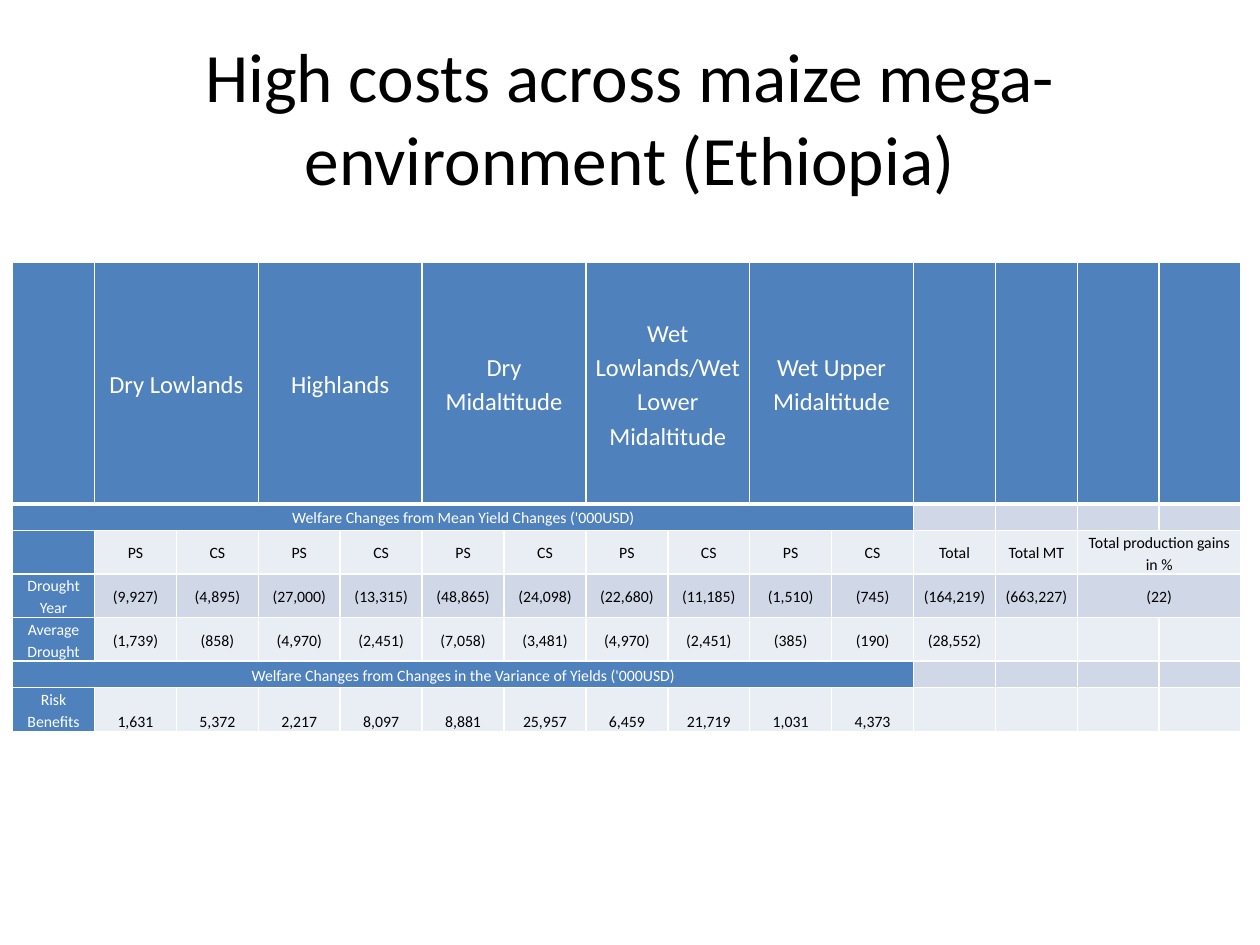
from lxml import etree
from pptx import Presentation
from pptx.dml.color import RGBColor
from pptx.enum import text
from pptx.oxml.ns import qn
from pptx.util import Inches, Pt

BLACK = RGBColor(0x00, 0x00, 0x00)
WHITE = RGBColor(0xFF, 0xFF, 0xFF)
BLUE = RGBColor(0x4F, 0x81, 0xBD)
BAND_DARK = RGBColor(0xD0, 0xD8, 0xE8)
BAND_LIGHT = RGBColor(0xE9, 0xED, 0xF4)

FONT = "Calibri"
COLUMN_COUNT = 15
SECTION_SPAN = 11
ROW_HEIGHTS = [1.92, 0.21, 0.33, 0.33, 0.33, 0.21, 0.33]
ZONES = [
    "Dry Lowlands",
    "Highlands",
    "Dry Midaltitude",
    "Wet Lowlands/Wet Lower Midaltitude",
    "Wet Upper Midaltitude",
]
ROWS = [
    [""] + [label for zone in ZONES for label in (zone, "")],
    ["Welfare Changes from Mean Yield Changes ('000USD)"],
    [""] + ["PS", "CS"] * len(ZONES) + ["Total", "Total MT", "Total production gains in %"],
    ["Drought Year", "(9,927)", "(4,895)", "(27,000)", "(13,315)", "(48,865)", "(24,098)",
     "(22,680)", "(11,185)", "(1,510)", "(745)", "(164,219)", "(663,227)", "(22)"],
    ["Average Drought", "(1,739)", "(858)", "(4,970)", "(2,451)", "(7,058)", "(3,481)",
     "(4,970)", "(2,451)", "(385)", "(190)", "(28,552)"],
    ["Welfare Changes from Changes in the Variance of Yields ('000USD)"],
    ["Risk Benefits", "1,631", "5,372", "2,217", "8,097", "8,881", "25,957",
     "6,459", "21,719", "1,031", "4,373"],
]
HEADER_ROW, RISK_ROW = 0, 6
SECTION_ROWS = (1, 5)
GAIN_ROWS = (2, 3)
GAIN_COLUMN = 13


def set_attributes(target, values):
    for name, value in values.items():
        setattr(target, name, value)


def add_title(slide, left, top, width, height):
    shape = slide.shapes.add_textbox(left, top, width, height)
    set_attributes(shape.text_frame, {
        "word_wrap": True,
        "vertical_anchor": text.MSO_ANCHOR.MIDDLE,
    })
    paragraph = shape.text_frame.paragraphs[0]
    paragraph.alignment = text.PP_ALIGN.CENTER
    run = paragraph.add_run()
    run.text = "High costs across maize mega-environment (Ethiopia)"
    set_attributes(run.font, {"name": FONT, "size": Pt(39.6)})
    run.font.color.rgb = BLACK


def set_borders(cell, bottom_width):
    properties = cell._tc.get_or_add_tcPr()
    widths = {"a:lnL": 1, "a:lnR": 1, "a:lnT": 1, "a:lnB": bottom_width}
    for tag, width in widths.items():
        line = etree.SubElement(properties, qn(tag), w=str(Pt(width)))
        fill = etree.SubElement(line, qn("a:solidFill"))
        etree.SubElement(fill, qn("a:srgbClr"), val=str(WHITE))


def format_cell(cell, label, row, column):
    is_header = row == HEADER_ROW
    is_blue = is_header or column == 0 or (row in SECTION_ROWS and column < SECTION_SPAN)
    is_risk_value = row == RISK_ROW and column > 0
    size = Pt(14 if is_header else 9)
    set_borders(cell, 3 if is_header else 1)
    cell.fill.solid()
    band = BAND_DARK if row % 2 else BAND_LIGHT
    cell.fill.fore_color.rgb = BLUE if is_blue else band
    set_attributes(cell, {
        "margin_left": Inches(0.07),
        "margin_right": Inches(0.07),
        "margin_top": 0,
        "margin_bottom": 0,
        "vertical_anchor": text.MSO_ANCHOR.BOTTOM if is_risk_value else text.MSO_ANCHOR.MIDDLE,
    })
    paragraph = cell.text_frame.paragraphs[0]
    if not label:
        etree.SubElement(paragraph._p, qn("a:endParaRPr"), sz=str(int(size.pt * 100)))
        return
    set_attributes(paragraph, {"alignment": text.PP_ALIGN.CENTER, "line_spacing": 1.15})
    if is_risk_value:
        paragraph.space_after = Pt(10)
    run = paragraph.add_run()
    run.text = label
    set_attributes(run.font, {"name": FONT, "size": size, "bold": False})
    run.font.color.rgb = WHITE if is_blue else BLACK


def merge_cells(table):
    spans = [(HEADER_ROW, 1 + 2 * index, 2) for index in range(len(ZONES))]
    spans += [(row, 0, SECTION_SPAN) for row in SECTION_ROWS]
    spans += [(row, GAIN_COLUMN, 2) for row in GAIN_ROWS]
    for row, column, span in spans:
        table.cell(row, column).merge(table.cell(row, column + span - 1))


def add_welfare_table(slide, left, top, width, height):
    shape = slide.shapes.add_table(len(ROWS), COLUMN_COUNT, left, top, width, height)
    table = shape.table
    for column in table.columns:
        column.width = width // COLUMN_COUNT
    for row, row_height in zip(table.rows, ROW_HEIGHTS):
        row.height = Inches(row_height)
    for row, labels in enumerate(ROWS):
        padded = labels + [""] * (COLUMN_COUNT - len(labels))
        for column, label in enumerate(padded):
            format_cell(table.cell(row, column), label, row, column)
    merge_cells(table)


def main():
    presentation = Presentation()
    presentation.slide_width = Inches(10)
    presentation.slide_height = Inches(7.5)
    slide = presentation.slides.add_slide(presentation.slide_layouts[6])
    add_title(slide, Inches(0.5), Inches(0.3), Inches(9), Inches(1.25))
    add_welfare_table(slide, Inches(0.1), Inches(2.08), Inches(9.75), Inches(sum(ROW_HEIGHTS)))
    presentation.save("out.pptx")


if __name__ == "__main__":
    main()
